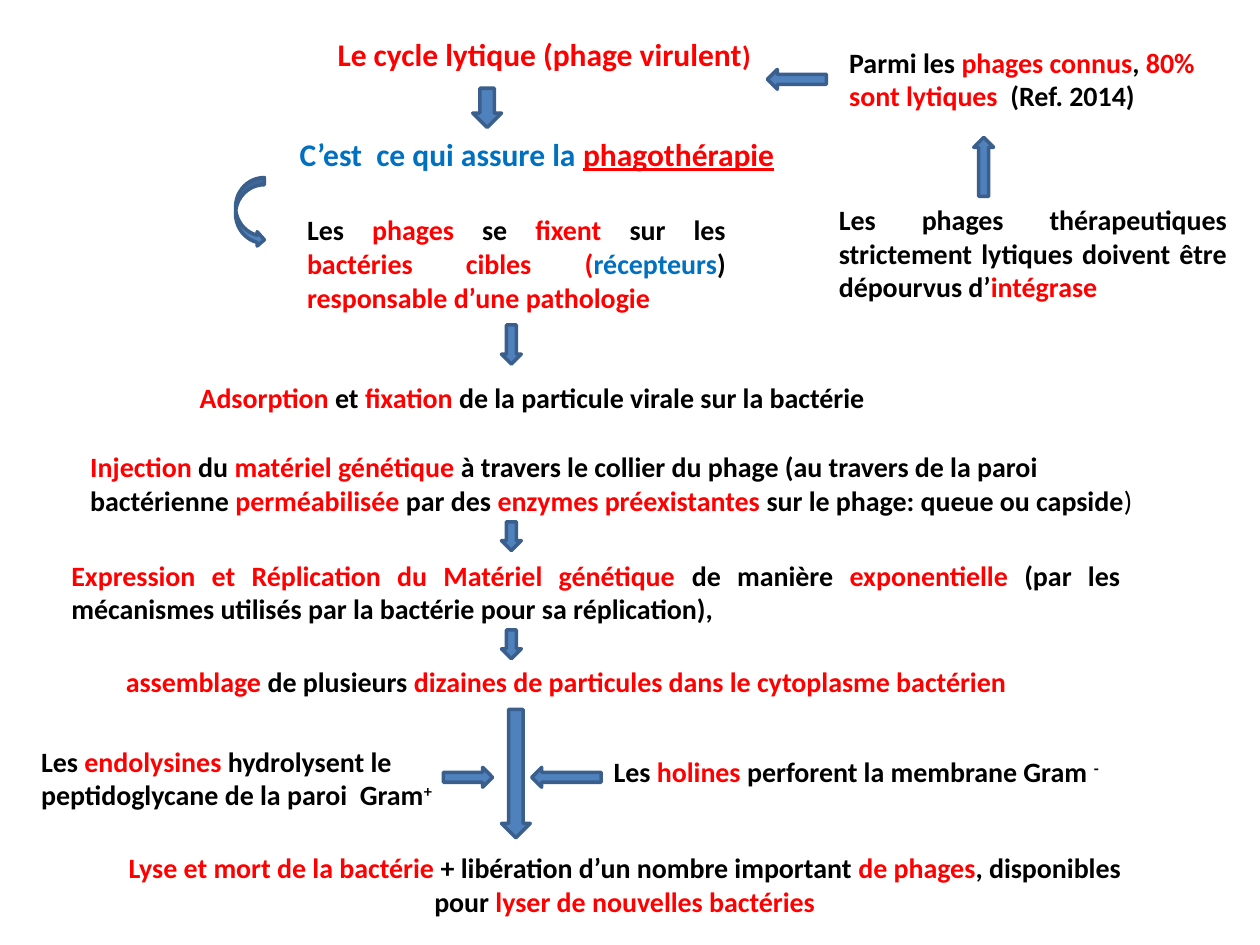
from dataclasses import dataclass

from pptx import Presentation
from pptx.dml.color import RGBColor
from pptx.enum import shapes, text
from pptx.util import Cm, Pt


@dataclass(frozen=True)
class Theme:
    font: str = "Calibri"
    heading: int = 18
    body: int = 16
    black: RGBColor = RGBColor(0, 0, 0)
    red: RGBColor = RGBColor(0xFF, 0, 0)
    blue: RGBColor = RGBColor(0, 0x70, 0xC0)
    arrow: RGBColor = RGBColor(0x4F, 0x81, 0xBD)
    outline: RGBColor = RGBColor(0x3A, 0x5F, 0x8C)
    line: int = 2


T = Theme()
K, R, B = T.black, T.red, T.blue
LEFT, CENTER, JUSTIFY = text.PP_ALIGN.LEFT, text.PP_ALIGN.CENTER, text.PP_ALIGN.JUSTIFY
ARROW = shapes.MSO_SHAPE
SUPER = {"baseline": 30}

STEPS = [  # position in cm, alignment, runs
    ((5.94, 4.17, 8.94, 2.31), JUSTIFY, [
        ("Les ", K), ("phages ", R), ("se ", K), ("fixent", R), (" sur les ", K),
        ("bactéries cibles (", R), ("récepteurs", B), (") ", K),
        ("responsable d’une pathologie ", R)]),
    ((3.58, 7.54, 14.3, 0.94), CENTER, [
        ("Adsorption ", R), ("et ", K), ("fixation", R),
        (" de la particule virale sur la bactérie", K)]),
    ((1.57, 8.94, 22.23, 1.63), LEFT, [
        ("Injection ", R), ("du ", K), ("matériel génétique ", R),
        ("à travers le collier du phage (au travers de la paroi bactérienne ", K),
        ("perméabilisée ", R), ("par des ", K), ("enzymes préexistantes ", R),
        ("sur le phage: queue ou capside", K), (")", K, {"bold": False})]),
    ((1.19, 11.13, 21.64, 1.63), JUSTIFY, [
        ("Expression et Réplication du Matériel génétique ", R), ("de manière ", K),
        ("exponentielle", R),
        (" (par les mécanismes utilisés par la bactérie pour sa réplication), ", K)]),
    ((2.18, 13.28, 18.47, 0.94), CENTER, [
        ("assemblage", R), (" de plusieurs ", K),
        ("dizaines de particules dans le cytoplasme bactérien", R)]),
    ((2.18, 17.02, 20.83, 1.63), CENTER, [
        ("Lyse et mort de la bactérie ", R), ("+ libération d’un nombre important ", K),
        ("de phages", R), (", disponibles pour ", K), ("lyser de nouvelles bactéries", R)]),
]

SIDE_NOTES = [
    ((16.87, 0.79, 7.75, 1.63), LEFT, [
        ("Parmi les ", K), ("phages connus", R), (", ", K), ("80% sont lytiques ", R),
        (" (Ref. 2014)", K)]),
    ((16.66, 3.96, 8.33, 2.31), JUSTIFY, [
        ("Les phages thérapeutiques strictement lytiques doivent être dépourvus d’", K),
        ("intégrase", R)]),
    ((0.58, 14.88, 9.12, 1.63), LEFT, [
        ("Les ", K), ("endolysines", R),
        (" hydrolysent le peptidoglycane de la paroi  Gram", K), ("+", K, SUPER)]),
    ((12.12, 15.09, 10.72, 0.94), LEFT, [
        ("Les ", K), ("holines", R), (" perforent la membrane Gram ", K), ("-", K, SUPER)]),
]

ARROWS = [
    (ARROW.DOWN_ARROW, 9.53, 1.78, 0.58, 0.79),
    (ARROW.CURVED_RIGHT_ARROW, 4.75, 3.58, 0.58, 1.4),
    (ARROW.DOWN_ARROW, 10.11, 6.55, 0.4, 0.79),
    (ARROW.DOWN_ARROW, 10.11, 10.52, 0.4, 0.58),
    (ARROW.DOWN_ARROW, 10.11, 12.7, 0.4, 0.58),
    (ARROW.DOWN_ARROW, 10.11, 14.3, 0.58, 2.59),
    (ARROW.LEFT_ARROW, 15.47, 1.4, 1.19, 0.4),
    (ARROW.UP_ARROW, 19.63, 2.77, 0.4, 1.19),
    (ARROW.RIGHT_ARROW, 8.94, 15.47, 0.99, 0.4),
    (ARROW.LEFT_ARROW, 10.72, 15.47, 1.4, 0.4),
]


def add_run(p, words, color, size=T.body, bold=True, underline=None, baseline=0):
    """Add formatted text; baseline is the percentage by which it is raised."""
    r = p.add_run()
    r.text = words
    r.font.name, r.font.size = T.font, Pt(size)
    r.font.bold, r.font.underline = bold, underline
    r.font.color.rgb = color
    if baseline:
        r.font._element.set("baseline", str(baseline * 1000))


def write(sp, runs, align=LEFT, wrap=True, size=T.body):
    tf = sp.text_frame
    tf.word_wrap = wrap
    tf.auto_size = text.MSO_AUTO_SIZE.SHAPE_TO_FIT_TEXT
    tf.vertical_anchor = text.MSO_ANCHOR.TOP
    p = tf.paragraphs[0]
    p.alignment = align
    for words, color, *extra in runs:
        add_run(p, words, color, **{"size": size, **(extra[0] if extra else {})})


def add_title(s, box, runs):
    sp = s.shapes.title
    sp.left, sp.top, sp.width, sp.height = map(Cm, box)
    write(sp, runs, size=T.heading)


def add_text(s, box, runs, **fmt):
    write(s.shapes.add_textbox(*map(Cm, box)), runs, **fmt)


def add_arrow(s, kind, *box):
    sp = s.shapes.add_shape(kind, *map(Cm, box))
    sp.shadow.inherit = False
    sp.fill.solid()
    sp.fill.fore_color.rgb = T.arrow
    sp.line.color.rgb = T.outline
    sp.line.width = Pt(T.line)


def main():
    prs = Presentation()
    prs.slide_width, prs.slide_height = Cm(25.4), Cm(19.05)
    s = prs.slides.add_slide(prs.slide_layouts[5])

    add_title(s, (6.55, 0.58, 9.93, 1.02), [
        ("Le cycle lytique (phage virulent", R), (")", R, {"size": T.body})])
    add_text(s, (5.79, 2.59, 10.16, 1.02), [
        ("C’est  ce qui assure la ", B), ("phagothérapie", R, {"underline": True})],
        wrap=False, size=T.heading)
    for box, align, runs in STEPS + SIDE_NOTES:
        add_text(s, box, runs, align=align)
    for arrow in ARROWS:
        add_arrow(s, *arrow)

    prs.save("out.pptx")


if __name__ == "__main__":
    main()
